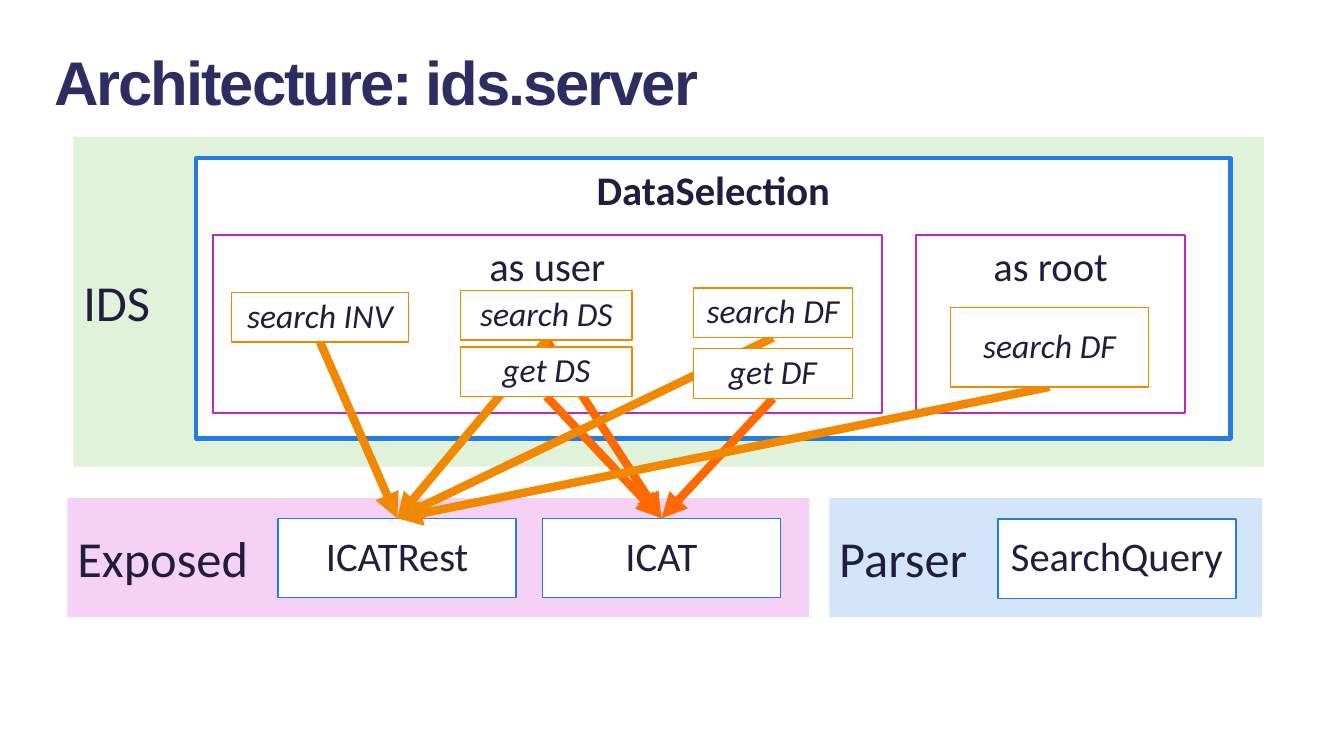
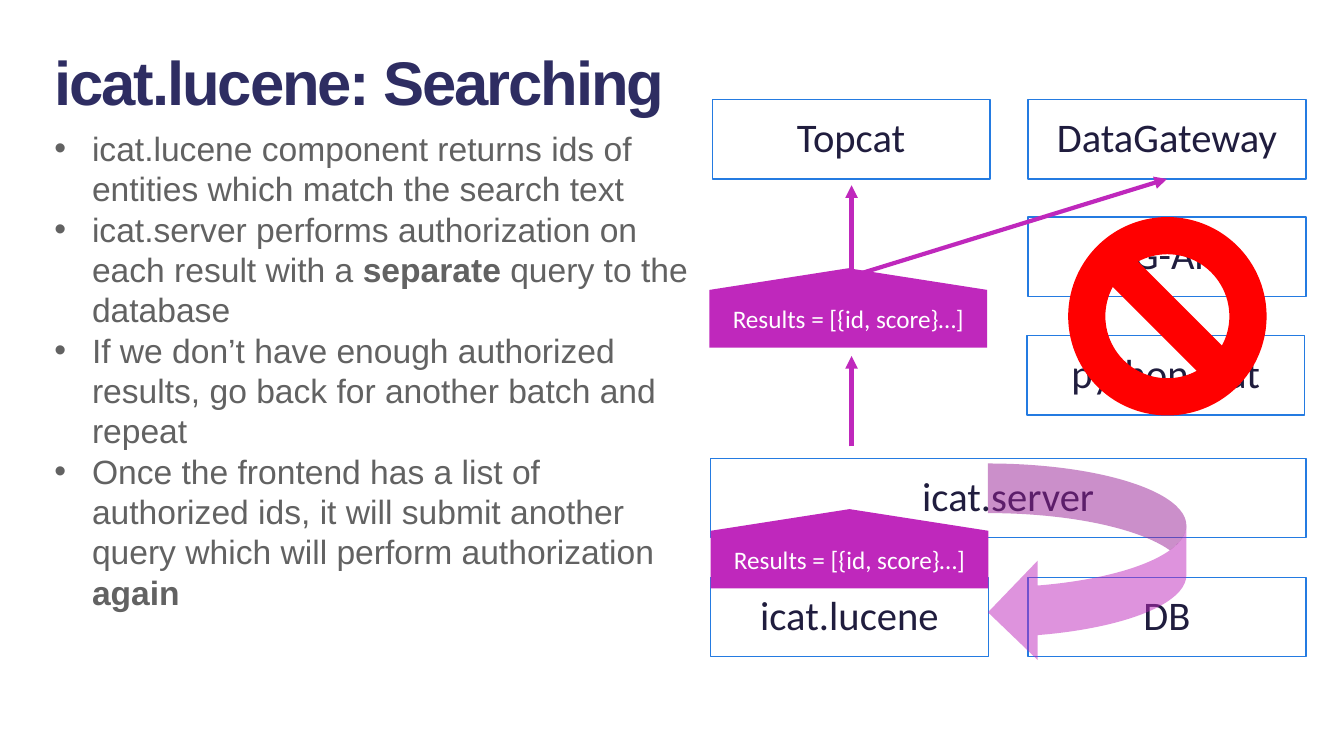
from lxml import etree
from pptx import Presentation
from pptx.dml.color import RGBColor
from pptx.enum.shapes import MSO_CONNECTOR, MSO_SHAPE
from pptx.enum.text import MSO_ANCHOR, MSO_AUTO_SIZE, PP_ALIGN
from pptx.oxml.ns import qn
from pptx.util import Cm, Pt

RECTANGLE = MSO_SHAPE.RECTANGLE
UP_ARROW = MSO_SHAPE.UP_ARROW
NO_SYMBOL = MSO_SHAPE.NO_SYMBOL
CURVED_ARROW = MSO_SHAPE.CURVED_RIGHT_ARROW
STRAIGHT = MSO_CONNECTOR.STRAIGHT
TOP, MIDDLE = MSO_ANCHOR.TOP, MSO_ANCHOR.MIDDLE
LEFT, CENTER = PP_ALIGN.LEFT, PP_ALIGN.CENTER
NO_AUTOFIT = MSO_AUTO_SIZE.NONE
TOP_SIDE, BOTTOM_SIDE = 0, 2
TITLE_ONLY = 5

COLORS = {
    "white": "FFFFFF", "title": "2E2D62", "body": "626262", "label": "201D3E",
    "blue": "247BE1", "magenta": "BF28BC", "amber": "F08900", "orange": "FF6900",
    "red": "FF0000", "green_band": "E1F2DB", "pink_band": "F5D1F5", "blue_band": "D3E5F9",
}
HEADING_FONT, LABEL_FONT = "Arial", "Calibri"
CARD_HEIGHT = 2


def rgb(color):
    return RGBColor.from_string(COLORS[color])


class Deck:
    """The shared style and the slide being drawn; lengths are centimetres."""

    def __init__(self):
        self.presentation = Presentation()
        self.presentation.slide_width = Cm(33.87)
        self.presentation.slide_height = Cm(19.05)
        self.slide = None

    def new_slide(self, heading):
        layout = self.presentation.slide_layouts[TITLE_ONLY]
        self.slide = self.presentation.slides.add_slide(layout)
        title = self.slide.shapes.title
        title.left, title.top, title.width, title.height = map(Cm, (1.12, 0.97, 17.65, 2.13))
        frame = title.text_frame
        frame.auto_size = NO_AUTOFIT
        frame.vertical_anchor = TOP
        frame.paragraphs[0].alignment = LEFT
        run = self.add_run(frame.paragraphs[0], heading, 44, "title", HEADING_FONT, bold=True)
        run.font._element.set("spc", "-150")

    def add_run(self, paragraph, text, size, color, font, bold=False, italic=False):
        run = paragraph.add_run()
        run.text = text
        run.font.size = Pt(size)
        run.font.name = font
        run.font.bold = bold
        run.font.italic = italic
        run.font.color.rgb = rgb(color)
        return run

    def add_preset(self, kind, box, fill):
        shape = self.slide.shapes.add_shape(kind, *map(Cm, box))
        shape.shadow.inherit = False
        shape.fill.solid()
        shape.fill.fore_color.rgb = rgb(fill)
        shape.line.fill.background()
        return shape

    def add_band(self, text, box, fill):
        band = self.add_preset(RECTANGLE, box, fill)
        paragraph = band.text_frame.paragraphs[0]
        paragraph.alignment = LEFT
        self.add_run(paragraph, text, 36, "label", LABEL_FONT)

    def add_card(self, text, box, border="blue", weight=1, size=29, anchor=MIDDLE,
                 bold=False, italic=False):
        """Add an outlined white box with a centred label."""
        card = self.add_preset(RECTANGLE, box, "white")
        card.line.color.rgb = rgb(border)
        card.line.width = Pt(weight)
        frame = card.text_frame
        frame.margin_left = frame.margin_right = Cm(0.3)
        frame.margin_top = frame.margin_bottom = Cm(0.3)
        frame.vertical_anchor = anchor
        paragraph = frame.paragraphs[0]
        paragraph.alignment = CENTER
        paragraph.line_spacing = 0.9
        self.add_run(paragraph, text, size, "label", LABEL_FONT, bold, italic)
        return card

    def add_operation(self, text, left, top, width, height=1.25):
        return self.add_card(text, (left, top, width, height), "amber", size=24, italic=True)

    def add_results(self, left, top):
        results = self.add_preset(UP_ARROW, (left, top, 7, 2), "magenta")
        results.adjustments[0] = 1
        results.adjustments[1] = 0.273
        paragraph = results.text_frame.paragraphs[0]
        paragraph.alignment = CENTER
        self.add_run(paragraph, "Results = [{id, score}…]", 18, "white", LABEL_FONT)

    def add_return_arrow(self, box):
        """Add the half-transparent arrow that curves back to the left."""
        arrow = self.add_preset(CURVED_ARROW, box, "magenta")
        properties = arrow._element.spPr
        properties.find(qn("a:xfrm")).set("flipH", "1")
        color = properties.find(qn("a:solidFill")).find(qn("a:srgbClr"))
        etree.SubElement(color, qn("a:alpha")).set("val", "50000")

    def add_arrow(self, start, end, color, weight):
        """Draw an arrow; each end is an (x, y) point or a (shape, side) joint."""
        arrow = self.slide.shapes.add_connector(STRAIGHT, 0, 0, 0, 0)
        if isinstance(start[0], (int, float)):
            arrow.begin_x, arrow.begin_y = map(Cm, start)
        else:
            arrow.begin_connect(*start)
        if isinstance(end[0], (int, float)):
            arrow.end_x, arrow.end_y = map(Cm, end)
        else:
            arrow.end_connect(*end)
        arrow.line.color.rgb = rgb(color)
        arrow.line.width = Pt(weight)
        line = arrow.line._get_or_add_ln()
        etree.SubElement(line, qn("a:tailEnd")).set("type", "triangle")
        etree.SubElement(arrow._element.spPr, qn("a:effectLst"))

    def add_bullets(self, items, box):
        """Add bullets, each a list of (text, bold) runs."""
        frame = self.slide.shapes.add_textbox(*map(Cm, box)).text_frame
        frame.word_wrap = True
        for index, runs in enumerate(items):
            paragraph = frame.add_paragraph() if index else frame.paragraphs[0]
            properties = paragraph._p.get_or_add_pPr()
            properties.set("marL", str(Cm(0.95)))
            properties.set("indent", str(-Cm(0.95)))
            etree.SubElement(properties, qn("a:buFont")).set("typeface", HEADING_FONT)
            etree.SubElement(properties, qn("a:buChar")).set("char", "•")
            for text, bold in runs:
                self.add_run(paragraph, text, 24, "body", HEADING_FONT, bold)

    def bring_to_front(self, shapes):
        for shape in shapes:
            self.slide.shapes._spTree.append(shape._element)


def draw_architecture(deck):
    deck.new_slide("Architecture: ids.server")
    deck.add_band("IDS", (1.85, 3.45, 30, 8.31), "green_band")
    deck.add_band("Exposed", (1.7, 12.55, 18.69, 3), "pink_band")
    deck.add_band("Parser", (20.9, 12.55, 10.9, 3), "blue_band")
    icat_rest = deck.add_card("ICATRest", (7.01, 13.06, 6, CARD_HEIGHT))
    icat = deck.add_card("ICAT", (13.67, 13.06, 6, CARD_HEIGHT))
    deck.add_card("SearchQuery", (25.15, 13.08, 6, CARD_HEIGHT))

    deck.add_card("DataSelection", (4.95, 3.99, 26.06, 7.06), weight=3, anchor=TOP, bold=True)
    for role, left, width in (("as user", 5.36, 16.87), ("as root", 23.09, 6.78)):
        deck.add_card(role, (left, 5.92, width, 4.5), "magenta", 1.5, anchor=TOP)

    search_inv = deck.add_operation("search INV", 5.84, 7.37, 4.45)
    search_ds = deck.add_operation("search DS", 11.61, 7.32, 4.32)
    get_ds = deck.add_operation("get DS", 11.61, 8.74, 4.32)
    search_df = deck.add_operation("search DF", 17.48, 7.26, 4)
    get_df = deck.add_operation("get DF", 17.48, 8.79, 4)
    root_search = deck.add_operation("search DF", 23.95, 7.75, 5, CARD_HEIGHT)

    calls = (
        (search_inv, icat_rest, "amber"),
        (get_ds, icat, "orange"),
        (get_df, icat, "orange"),
        (search_ds, icat, "orange"),
        (root_search, icat_rest, "amber"),
        (search_ds, icat_rest, "amber"),
        (search_df, icat_rest, "amber"),
    )
    for operation, service, color in calls:
        deck.add_arrow((operation, BOTTOM_SIDE), (service, TOP_SIDE), color, 6)
    deck.bring_to_front((search_inv, search_ds, get_ds, search_df, get_df, root_search))


def draw_searching(deck):
    deck.new_slide("icat.lucene: Searching")
    deck.add_bullets([
        [("icat.lucene component returns ids of entities which match the search text", False)],
        [("icat.server performs authorization on each result with a ", False),
         ("separate ", True), ("query to the database", False)],
        [("If we don’t have enough authorized results, go back for another batch and repeat",
          False)],
        [("Once the frontend has a list of authorized ids, it will submit another query "
          "which will perform authorization ", False), ("again", True)],
    ], (1.12, 3.1, 16.76, 12.57))

    left, right, width = 17.91, 25.91, 7
    gateway = deck.add_card("DataGateway", (right, 2.51, width, CARD_HEIGHT))
    for component, x, y, span in (
        ("Topcat", left + 0.04, 2.51, width),
        ("DG-API", right, 5.47, width),
        ("python-icat", right - 0.03, 8.46, width),
        ("icat.server", left, 11.55, right + width - left),
        ("icat.lucene", left, 14.55, width),
        ("DB", right, 14.55, width),
    ):
        deck.add_card(component, (x, y, span, CARD_HEIGHT))

    deck.add_preset(NO_SYMBOL, (26.92, 5.47, 5, 5), "red")
    deck.add_results(left, 12.83)
    deck.add_results(left - 0.03, 6.76)
    deck.add_return_arrow((24.9, 11.68, 5, 5))

    flow_x = 21.46
    for start, end in (
        ((flow_x, 6.96), (gateway, BOTTOM_SIDE)),
        ((flow_x, 6.96), (flow_x, 4.67)),
        ((flow_x, 11.25), (flow_x, 8.97)),
    ):
        deck.add_arrow(start, end, "magenta", 3)


def main():
    deck = Deck()
    draw_architecture(deck)
    draw_searching(deck)
    deck.presentation.save("out.pptx")


if __name__ == "__main__":
    main()
